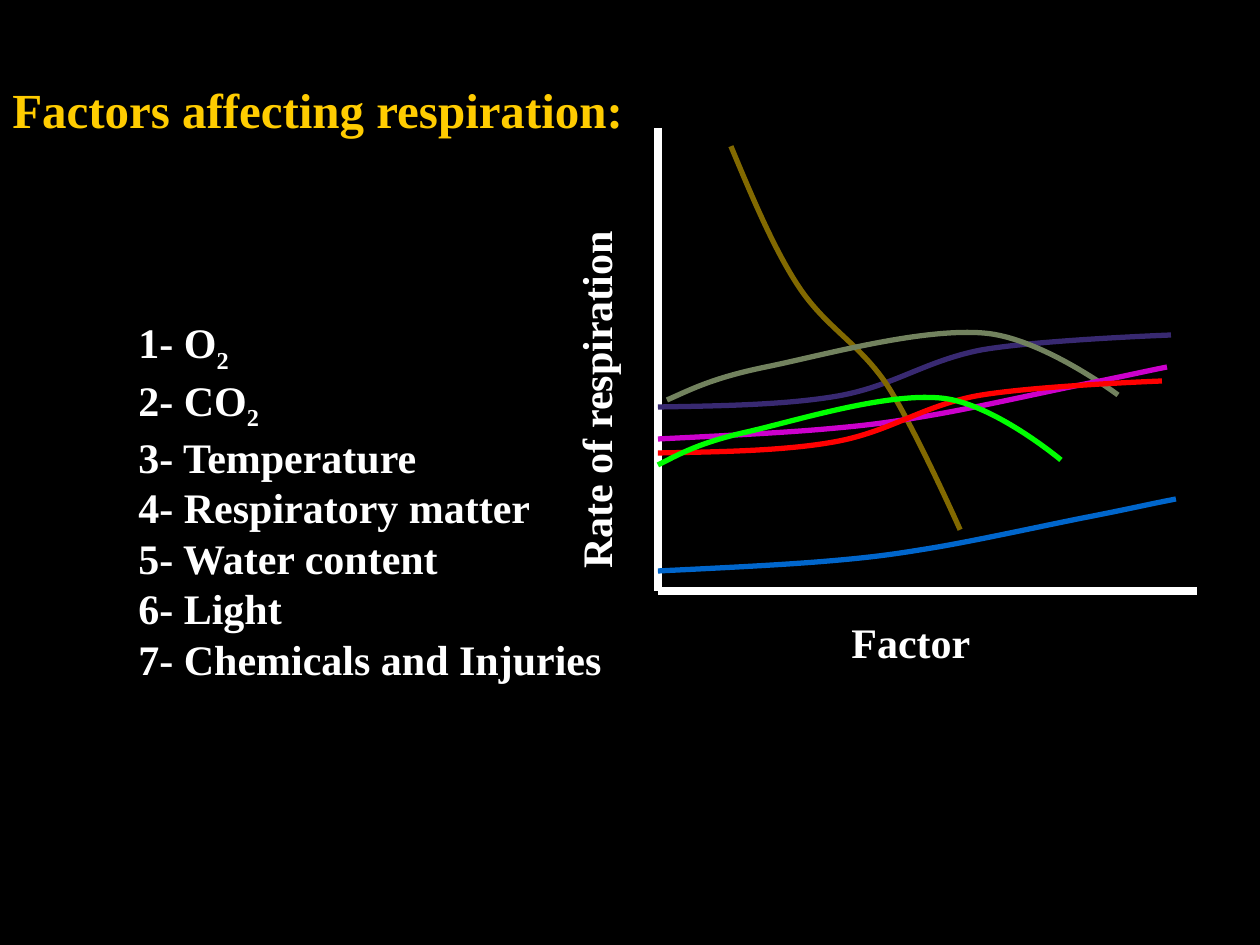
"""Build a slide listing the factors of respiration beside a sketch of their rate curves."""
from dataclasses import dataclass

from lxml import etree
from pptx import Presentation
from pptx.dml.color import RGBColor
from pptx.enum.shapes import MSO_CONNECTOR
from pptx.enum.text import MSO_ANCHOR
from pptx.oxml.ns import qn
from pptx.slide import Slide
from pptx.text.text import TextFrame, _Paragraph
from pptx.util import Emu, Pt

STRAIGHT = MSO_CONNECTOR.STRAIGHT
MIDDLE = MSO_ANCHOR.MIDDLE
TOP = MSO_ANCHOR.TOP

EMU_PER_PX = 914400 / 126
FONT = "Times New Roman"
COLORS = {
    "background": "000000",
    "heading": "FFCC00",
    "text": "FFFFFF",
    "axis": "FFFFFF",
    "violet": "382971",
    "brown": "826900",
    "sage": "72825E",
    "magenta": "CC00CC",
    "blue": "0066CC",
    "red": "FF0000",
    "green": "00FF00",
}

CURVE_HEIGHT = 72
PROFILES = {
    "sigmoid": [(0, 1), (0.12, 0.98), (0.25, 0.97), (0.35, 0.85), (0.46, 0.71),
                (0.52, 0.36), (0.63, 0.21), (0.74, 0.07), (1, 0), (1, 0)],
    "hump": [(0, 1), (0.05, 0.86), (0.1, 0.7), (0.22, 0.54), (0.34, 0.39),
             (0.56, 0), (0.7, 0.07), (0.83, 0.12), (1, 0.93), (1, 0.93)],
    "slope": [(0, 1), (0.12, 0.96), (0.24, 0.91), (0.33, 0.86), (0.42, 0.81),
              (0.46, 0.76), (0.54, 0.67), (0.63, 0.56), (0.76, 0.35),
              (0.83, 0.25), (0.91, 0.14), (0.95, 0.07), (1, 0)],
}


@dataclass(frozen=True)
class Curve:
    """A rate curve: its profile, colour, top-left corner, width and turn."""
    profile: str
    color: str
    left: int
    top: int
    width: int
    rotation: float = 0


@dataclass(frozen=True)
class Axis:
    """A chart axis from one point to another."""
    start: tuple[int, int]
    end: tuple[int, int]


@dataclass(frozen=True)
class Label:
    """A text with its box and turn."""
    text: str
    left: int
    top: int
    width: int
    height: int
    rotation: float = 0


@dataclass(frozen=True)
class Factor:
    """A list entry with an optional subscript."""
    name: str
    subscript: str = ""


HEADING = Label("Factors affecting respiration:", 0, 49, 636, 665)
FACTORS = [
    Factor("O", "2"),
    Factor("CO", "2"),
    Factor("Temperature"),
    Factor("Respiratory matter"),
    Factor("Water content"),
    Factor("Light"),
    Factor("Chemicals and Injuries"),
]
AXES = [Axis((658, 591), (1197, 591)), Axis((658, 128), (658, 591))]
LABELS = [
    Label("Rate of respiration", 379, 333, 433, 63, 270),
    Label("Factor", 839, 610, 145, 63),
]
CURVES = [
    Curve("sigmoid", "violet", 658, 335, 513),
    Curve("sigmoid", "brown", 625, 302, 441, 68.4),
    Curve("hump", "sage", 667, 328, 451),
    Curve("slope", "magenta", 658, 367, 509),
    Curve("slope", "blue", 658, 499, 518),
    Curve("sigmoid", "red", 658, 381, 504),
    Curve("hump", "green", 658, 393, 403),
]


def px(length: int) -> Emu:
    """Turn pixels into EMU."""
    return Emu(round(length * EMU_PER_PX))


def rgb(name: str) -> RGBColor:
    """Look up a colour by name."""
    return RGBColor.from_string(COLORS[name])


def style(paragraph: _Paragraph, size: int, color: str) -> None:
    """Set the bold serif font of a paragraph."""
    font = paragraph.font
    font.name, font.size, font.bold = FONT, Pt(size), True
    font.color.rgb = rgb(color)


def add_text_frame(slide: Slide, box: Label) -> TextFrame:
    """Add a wrapping text box and return its frame."""
    holder = slide.shapes.add_textbox(px(box.left), px(box.top), px(box.width), px(box.height))
    holder.rotation = box.rotation
    frame = holder.text_frame
    frame.word_wrap = True
    frame.vertical_anchor = TOP
    frame.paragraphs[0].text = box.text
    return frame


def add_factor_list(slide: Slide) -> None:
    """Add the heading and the numbered factors."""
    frame = add_text_frame(slide, HEADING)
    frame.vertical_anchor = MIDDLE
    style(frame.paragraphs[0], 28, "heading")
    frame.paragraphs[0].space_after = Pt(102)
    for number, factor in enumerate(FACTORS, start=1):
        entry = frame.add_paragraph()
        style(entry, 24, "text")
        entry._p.get_or_add_pPr().set("marL", str(px(126)))
        entry.add_run().text = f"{number}- {factor.name}"
        if factor.subscript:
            subscript = entry.add_run()
            subscript.text = factor.subscript
            subscript._r.get_or_add_rPr().set("baseline", "-25000")


def add_axis(slide: Slide, axis: Axis) -> None:
    """Draw an axis line."""
    line = slide.shapes.add_connector(STRAIGHT, *map(px, axis.start + axis.end))
    line.line.color.rgb = rgb("axis")
    line.line.width = Pt(4.5)
    etree.SubElement(line._element.spPr, qn("a:effectLst"))


def add_curve(slide: Slide, curve: Curve) -> None:
    """Draw a profile as a chain of Bézier segments, three points to each."""
    start, *controls = [
        (round(curve.left + x * curve.width), round(curve.top + y * CURVE_HEIGHT))
        for x, y in PROFILES[curve.profile]
    ]
    builder = slide.shapes.build_freeform(*start, scale=EMU_PER_PX)
    builder.add_line_segments(controls, close=False)
    stroke = builder.convert_to_shape()
    outline = next(stroke._element.iter(qn("a:path")))
    segments = outline.findall(qn("a:lnTo"))
    for first in range(0, len(segments), 3):
        bezier = etree.SubElement(outline, qn("a:cubicBezTo"))
        for segment in segments[first:first + 3]:
            bezier.append(segment[0])
            outline.remove(segment)
    stroke.rotation = curve.rotation
    stroke.shadow.inherit = False
    stroke.fill.background()
    stroke.line.color.rgb = rgb(curve.color)
    stroke.line.width = Pt(3)


def main() -> None:
    """Build and save the slide."""
    deck = Presentation()
    deck.slide_width, deck.slide_height = px(1260), px(945)
    slide = deck.slides.add_slide(deck.slide_layouts[6])
    slide.background.fill.solid()
    slide.background.fill.fore_color.rgb = rgb("background")
    add_factor_list(slide)
    for axis in AXES:
        add_axis(slide, axis)
    for label in LABELS:
        style(add_text_frame(slide, label).paragraphs[0], 24, "text")
    for curve in CURVES:
        add_curve(slide, curve)
    deck.save("out.pptx")


if __name__ == "__main__":
    main()
